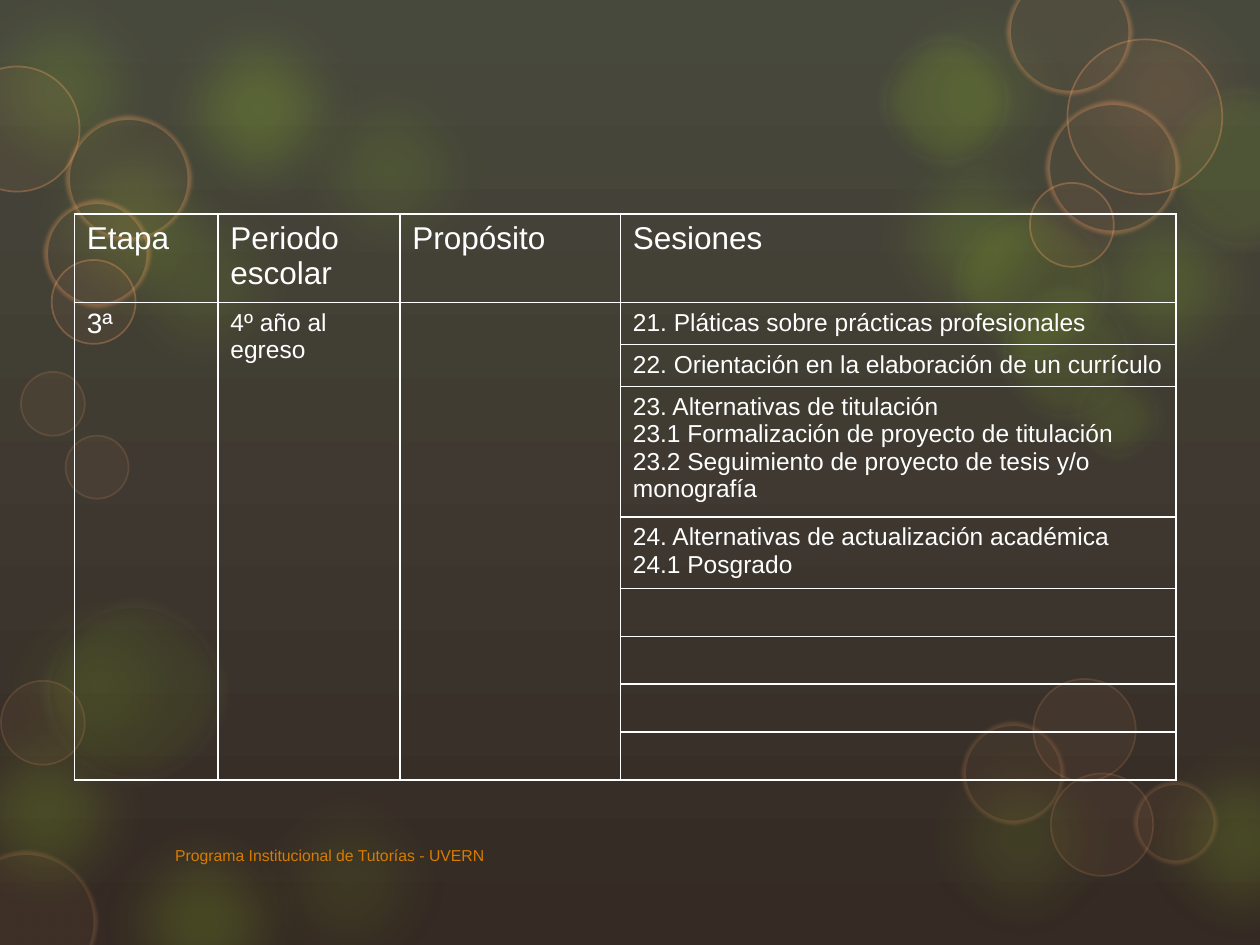
from dataclasses import dataclass

from lxml.etree import SubElement
from pptx import Presentation
from pptx.dml.color import RGBColor as RGB
from pptx.enum.shapes import MSO_SHAPE as SHAPE
from pptx.enum.text import MSO_ANCHOR as ANCHOR
from pptx.oxml.ns import qn
from pptx.util import Pt

COLORS = {"top": "48493D", "bottom": "352A24", "green": "AAEA25", "lime": "DFF7AE",
          "peach": "FFA466", "footer": "D77C01", "white": "FFFFFF"}
FONT = "Arial"
WIDTH, HEIGHT = 720, 540


@dataclass(frozen=True)
class Style:
    fill: str
    soft: float = 0
    line: str = ""
    weight: float = 0
    line_alpha: int = 0


@dataclass(frozen=True)
class Bubble:
    left: float
    top: float
    size: float
    alpha: int
    style: Style


HAZE = Style("green", 32)
PEACH_HAZE = Style("peach", 32)
GLOW = Style("green", 12.5, "lime", 14, 6)
RING, FAINT_RING = (Style("peach", 0, "peach", 1, a) for a in (30, 15))
BLUR, FAINT_BLUR = (Style("peach", 2.5, "peach", 5, a) for a in (30, 15))

HAZE_SIZE = 150.5
HAZES = [(41, 86.5, 10), (147.5, 22.5, 10), (41, 451.5, 16), (-40.5, -24, 14),
         (72.5, -13, 20), (0, 52, 15), (481.5, -21, 10), (590.5, 86.5, 15),
         (634.5, 404.5, 16), (-49, 389.5, 16), (481.5, 62, 15), (508.5, 404.5, 10),
         (124.5, 429, 8), (-19, 318, 8)]
# style, fill alpha, (left, top, diameter) of each circle
GROUPS = [
    (PEACH_HAZE, 10, [(590.5, -24, HAZE_SIZE)]),
    (HAZE, 10, [(486, 188.5, 95.5)]),
    (GLOW, 10, [(661, 47, 98.5), (499.5, 16.5, 82), (541.5, 114.5, 95.5),
                (568, 161.5, 82), (610, 209.5, 57)]),
    (GLOW, 6, [(21.5, 340.5, 110)]),
    (RING, 5, [(-26, 38, 71.5), (29.5, 148.5, 48), (610, 22.5, 88.5),
               (588.5, 104.5, 48)]),
    (BLUR, 5, [(37.5, 66, 72), (25, 114.5, 61), (575.5, -17.5, 71.5),
               (597.5, 57.5, 76.5)]),
    (FAINT_RING, 5, [(0.5, 389, 48), (600.5, 442, 58.5), (590.5, 388, 58.5),
                     (12, 212.5, 36.5), (37.5, 249, 36)]),
    (FAINT_BLUR, 5, [(-26, 486, 81.5), (549.5, 412.5, 58.5), (648, 446.5, 47.5)]),
]

COL_WIDTHS = [82, 104, 126, 317.5]
ROW_HEIGHTS = [47.4, 23.3, 22.9, 70.3, 38.5] + [27.4] * 4
HEADERS = ["Etapa", "Periodo escolar", "Propósito", "Sesiones"]
SESSIONS = [
    ["21. Pláticas sobre prácticas profesionales"],
    ["22. Orientación en la elaboración de un currículo"],
    ["23. Alternativas de titulación", "23.1 Formalización de proyecto de titulación",
     "23.2 Seguimiento de proyecto de tesis y/o monografía"],
    ["24. Alternativas de actualización académica", "24.1 Posgrado"],
]


def rgb(name: str) -> RGB:
    return RGB.from_string(COLORS[name])


def set_alpha(format_el, percent: int) -> None:
    SubElement(format_el.find(".//" + qn("a:srgbClr")), qn("a:alpha"),
               val=str(percent * 1000))


def draw_bubble(shapes, b: Bubble) -> None:
    sp = shapes.add_shape(SHAPE.OVAL, Pt(b.left), Pt(b.top), Pt(b.size), Pt(b.size))
    style, pr = b.style, sp._element.spPr
    sp.fill.solid()
    sp.fill.fore_color.rgb = rgb(style.fill)
    set_alpha(pr.find(qn("a:solidFill")), b.alpha)
    if style.line:
        sp.line.color.rgb = rgb(style.line)
        sp.line.width = Pt(style.weight)
        set_alpha(pr.find(qn("a:ln")), style.line_alpha)
    else:
        sp.line.fill.background()
    sp.shadow.inherit = False
    if style.soft:
        SubElement(pr.find(qn("a:effectLst")), qn("a:softEdge"), rad=str(Pt(style.soft)))


def add_lines(tf, lines: list[str], size: float, color: str) -> None:
    for i, text in enumerate(lines):
        p = tf.add_paragraph() if i else tf.paragraphs[0]
        r = p.add_run()
        r.text = text
        r.font.name, r.font.size = FONT, Pt(size)
        r.font.color.rgb = rgb(color)


def style_cell(cell) -> None:
    """Clear the fill, rule all four sides and keep an empty line small."""
    pr = cell._tc.get_or_add_tcPr()
    for side in ("lnL", "lnR", "lnT", "lnB"):
        ln = SubElement(pr, qn("a:" + side), w=str(Pt(1)))
        SubElement(SubElement(ln, qn("a:solidFill")), qn("a:srgbClr"), val=COLORS["white"])
    cell.fill.background()
    p = cell.text_frame.paragraphs[0]
    if not p.runs:
        SubElement(p._p, qn("a:endParaRPr"), sz="1000")


def draw_table(shapes) -> None:
    frame = shapes.add_table(len(ROW_HEIGHTS), len(COL_WIDTHS), Pt(42.5), Pt(122.4),
                             Pt(sum(COL_WIDTHS)), Pt(sum(ROW_HEIGHTS)))
    table = frame.table
    table.first_row = table.horz_banding = False
    for col, width in zip(table.columns, COL_WIDTHS):
        col.width = Pt(width)
    for row, height in zip(table.rows, ROW_HEIGHTS):
        row.height = Pt(height)
    entries = [(0, c, [text], 18) for c, text in enumerate(HEADERS)]
    entries += [(1, 0, ["3ª"], 16), (1, 1, ["4º año al egreso"], 14)]
    entries += [(i, 3, lines, 14) for i, lines in enumerate(SESSIONS, 1)]
    for row, col, lines, size in entries:
        add_lines(table.cell(row, col).text_frame, lines, size, "white")
    for cell in table.iter_cells():
        style_cell(cell)
    for col in range(3):
        table.cell(1, col).merge(table.cell(len(ROW_HEIGHTS) - 1, col))


def draw_footer(shapes) -> None:
    tf = shapes.add_textbox(Pt(93), Pt(468.7), Pt(414), Pt(28.8)).text_frame
    tf.word_wrap = True
    tf.vertical_anchor = ANCHOR.BOTTOM
    add_lines(tf, ["Programa Institucional de Tutorías - UVERN"], 9, "footer")


def main() -> None:
    prs = Presentation()
    prs.slide_width, prs.slide_height = Pt(WIDTH), Pt(HEIGHT)
    s = prs.slides.add_slide(prs.slide_layouts[6])
    fill = s.background.fill
    fill.gradient()
    fill.gradient_angle = 270
    for stop, name in zip(fill.gradient_stops, ("top", "bottom")):
        stop.color.rgb = rgb(name)
    bubbles = [Bubble(x, y, HAZE_SIZE, alpha, HAZE) for x, y, alpha in HAZES]
    bubbles += [Bubble(*circle, alpha, style)
                for style, alpha, circles in GROUPS for circle in circles]
    for b in bubbles:
        draw_bubble(s.shapes, b)
    draw_footer(s.shapes)
    draw_table(s.shapes)
    prs.save("out.pptx")


if __name__ == "__main__":
    main()
